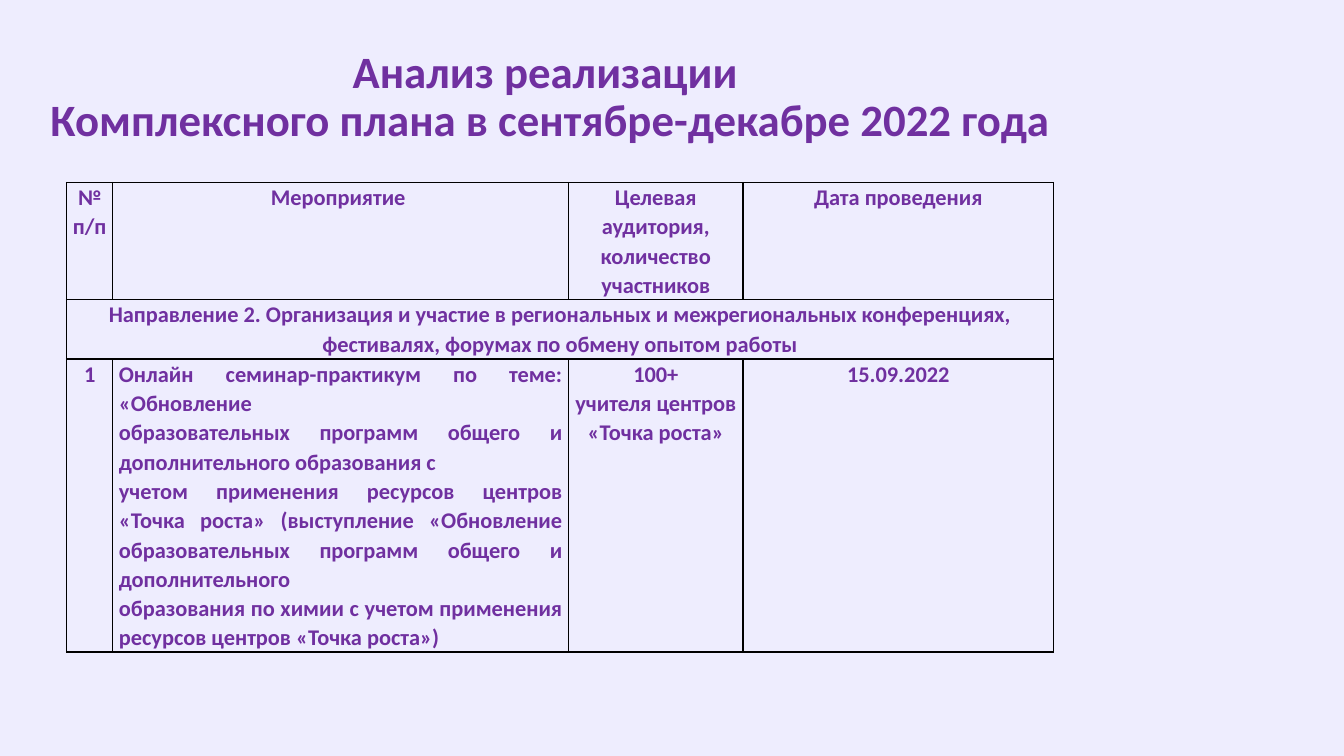
from dataclasses import dataclass

from lxml import etree
from pptx import Presentation
from pptx.dml.color import RGBColor
from pptx.enum import text
from pptx.oxml import ns
from pptx.util import Inches, Pt


@dataclass(frozen=True)
class Theme:
    background: RGBColor = RGBColor(0xEE, 0xED, 0xFE)
    ink: RGBColor = RGBColor(0x70, 0x30, 0xA0)
    border: str = "000000"
    font: str = "Calibri"
    title_size: int = 32
    table_size: int = 16


THEME = Theme()
CENTER, JUSTIFY = text.PP_ALIGN.CENTER, text.PP_ALIGN.JUSTIFY

TITLE = ["Анализ реализации ", "Комплексного плана в сентябре-декабре 2022 года "]
COLUMNS = [0.46, 4.52, 1.73, 3.08]
ROWS = [1.16, 0.59, 2.9]
EVENT_COLUMN = 1
HEADERS = ["№ п/п", "Мероприятие ", "Целевая аудитория, количество участников",
           "Дата проведения"]
SECTION = ("Направление 2. Организация и участие в региональных и межрегиональных "
           "конференциях, фестивалях, форумах по обмену опытом работы")
EVENT = [
    ["1"],
    ["Онлайн семинар-практикум по теме: «Обновление",
     "образовательных программ общего и дополнительного образования с",
     "учетом применения ресурсов центров «Точка роста» (выступление «Обновление "
     "образовательных программ общего и дополнительного",
     "образования по химии с учетом применения ресурсов центров «Точка роста»)"],
    ["100+", "учителя центров «Точка роста»"],
    ["15.09.2022"],
]


def add_run(p, words, size):
    r = p.add_run()
    r.text = words
    r.font.name = THEME.font
    r.font.size = Pt(size)
    r.font.bold = True
    r.font.color.rgb = THEME.ink


def add_title(s, left, top, width, height):
    sp = s.shapes.title
    sp.left, sp.top, sp.width, sp.height = map(Inches, (left, top, width, height))
    tf = sp.text_frame
    tf.word_wrap = True
    tf.auto_size = text.MSO_AUTO_SIZE.NONE
    tf.vertical_anchor = text.MSO_ANCHOR.MIDDLE
    p = tf.paragraphs[0]
    p.alignment = CENTER
    p.line_spacing = 0.9
    for i, line in enumerate(TITLE):
        if i:
            p.add_line_break()
        add_run(p, line, THEME.title_size)


def set_borders(cell):
    """Put a thin line on all four sides; lines must precede the cell fill."""
    tc_pr = cell._tc.get_or_add_tcPr()
    for i, side in enumerate(("lnL", "lnR", "lnT", "lnB")):
        line = etree.Element(ns.qn(f"a:{side}"), w=str(Pt(1)))
        fill = etree.SubElement(line, ns.qn("a:solidFill"))
        etree.SubElement(fill, ns.qn("a:srgbClr"), val=THEME.border)
        tc_pr.insert(i, line)


def fill_cell(cell, paragraphs, alignment=CENTER):
    cell.margin_left = cell.margin_right = Inches(0.06)
    cell.margin_top = cell.margin_bottom = 0
    cell.fill.background()
    set_borders(cell)
    tf = cell.text_frame
    for i, words in enumerate(paragraphs):
        p = tf.add_paragraph() if i else tf.paragraphs[0]
        p.alignment = alignment
        p.line_spacing = 1.07
        add_run(p, words, THEME.table_size)


def add_plan_table(s, left, top):
    frame = s.shapes.add_table(len(ROWS), len(COLUMNS), Inches(left), Inches(top),
                               Inches(sum(COLUMNS)), Inches(sum(ROWS)))
    table = frame.table
    table.first_row = table.horz_banding = False
    for column, width in zip(table.columns, COLUMNS):
        column.width = Inches(width)
    for row, height in zip(table.rows, ROWS):
        row.height = Inches(height)
    table.cell(1, 0).merge(table.cell(1, len(COLUMNS) - 1))
    rows = [[[h] for h in HEADERS], [[SECTION], [], [], []], EVENT]
    for i, row in enumerate(rows):
        for j, paragraphs in enumerate(row):
            justified = row is EVENT and j == EVENT_COLUMN
            fill_cell(table.cell(i, j), paragraphs, JUSTIFY if justified else CENTER)


def main():
    prs = Presentation()
    prs.slide_width, prs.slide_height = Inches(13.33), Inches(7.5)
    s = prs.slides.add_slide(prs.slide_layouts[5])
    s.background.fill.solid()
    s.background.fill.fore_color.rgb = THEME.background
    add_title(s, 0.38, 0.25, 10.16, 1.45)
    add_plan_table(s, 0.66, 1.81)
    prs.save("out.pptx")


if __name__ == "__main__":
    main()
